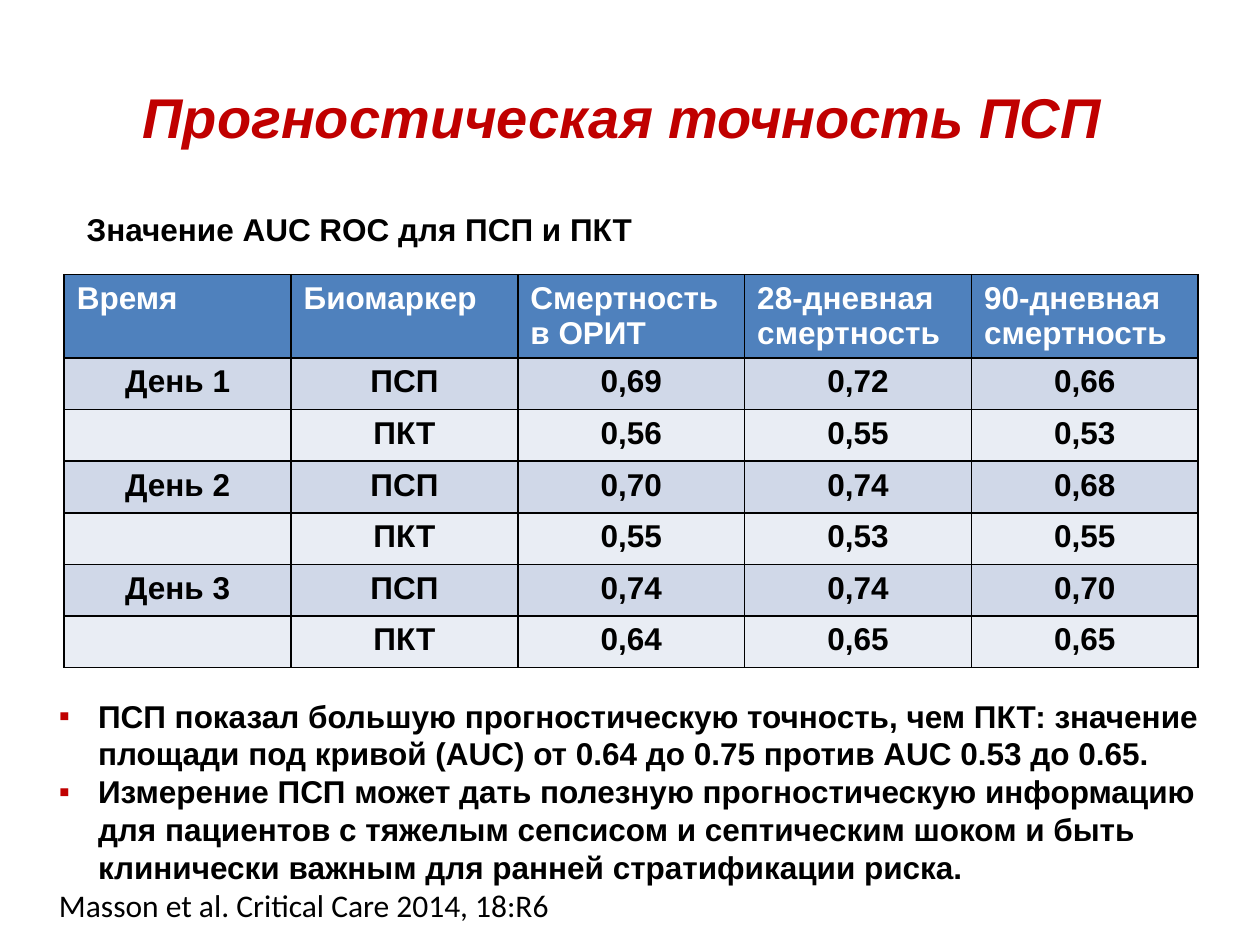
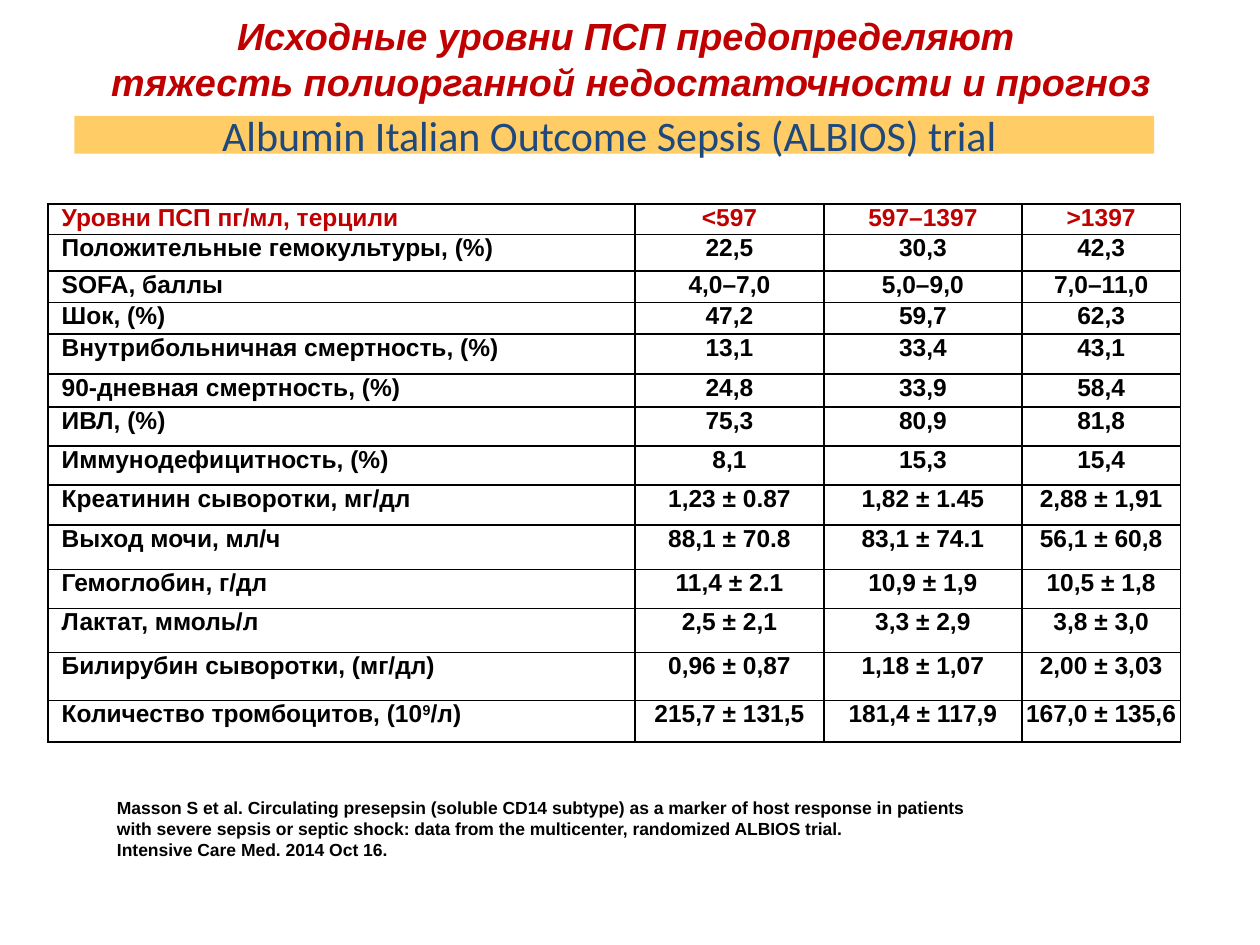
from dataclasses import dataclass

from lxml import etree
from pptx import Presentation
from pptx.dml.color import RGBColor
from pptx.enum.shapes import MSO_SHAPE
from pptx.enum.text import MSO_ANCHOR, MSO_AUTO_SIZE, PP_ALIGN
from pptx.oxml.ns import qn
from pptx.util import Inches, Pt

LEFT, MID = PP_ALIGN.LEFT, PP_ALIGN.CENTER
TOP, CENTER = MSO_ANCHOR.TOP, MSO_ANCHOR.MIDDLE
GROW, FIXED = MSO_AUTO_SIZE.SHAPE_TO_FIT_TEXT, MSO_AUTO_SIZE.NONE
RECT = MSO_SHAPE.RECTANGLE


@dataclass(frozen=True)
class Theme:
    red: str = "C00000"
    black: str = "000000"
    white: str = "FFFFFF"
    blue: str = "4F81BD"
    navy: str = "1F497D"
    gold: str = "FFCC66"
    bands: tuple = ("D0D8E8", "E9EDF4")
    sans: str = "Arial"
    plain: str = "Calibri"
    head: float = 32
    sub: float = 21.6
    band: float = 24
    body: float = 18
    data: float = 14
    note: float = 10


THEME = Theme()


def adorn(item, values):
    for key, value in values.items():
        setattr(item, key, value)


def style(size, color=THEME.black, **more):
    font = {"name": THEME.sans, "size": Pt(size), "bold": True, **more}
    return font, RGBColor.from_string(color)


def add_tag(parent, name, **values):
    return etree.SubElement(parent, qn(f"a:{name}"), values)


class Deck:
    def __init__(self, theme):
        self.theme = theme
        self.file = Presentation()
        adorn(self.file, {"slide_width": Inches(10), "slide_height": Inches(7.5)})

    def start(self):
        self.slide = self.file.slides.add_slide(self.file.slide_layouts[6])

    def add_line(self, para, text, look, align=LEFT):
        para.alignment = align
        font, color = look
        for spot, part in enumerate(text.split("^")):
            if part:
                run = para.add_run()
                run.text = part
                adorn(run.font, font)
                run.font.color.rgb = color
                if spot % 2:
                    run._r.get_or_add_rPr().set("baseline", "30000")

    def fill_text(self, frame, lines, look, align=LEFT, **values):
        adorn(frame, {"word_wrap": True, **values})
        for spot, line in enumerate(lines):
            para = frame.add_paragraph() if spot else frame.paragraphs[0]
            self.add_line(para, line, look, align)

    def text(self, place, lines, look, align=LEFT, **values):
        box = self.slide.shapes.add_textbox(*map(Inches, place))
        self.fill_text(box.text_frame, lines, look, align, **values)
        return box.text_frame

    def title(self, place, lines, size):
        look = style(size, self.theme.red, italic=True)
        self.text(place, lines, look, MID, vertical_anchor=CENTER, auto_size=FIXED)

    def band(self, place, line, look):
        bar = self.slide.shapes.add_shape(RECT, *map(Inches, place))
        bar.shadow.inherit = False
        bar.fill.solid()
        bar.fill.fore_color.rgb = RGBColor.from_string(self.theme.gold)
        bar.line.fill.background()
        self.fill_text(bar.text_frame, [line], look, MID, vertical_anchor=CENTER)

    def bullet(self, para):
        props = para._p.get_or_add_pPr()
        gap = Inches(0.31)
        props.set("marL", str(gap))
        props.set("indent", str(-gap))
        add_tag(add_tag(props, "buClr"), "srgbClr", val=self.theme.red)
        add_tag(props, "buFont", typeface=self.theme.sans)
        add_tag(props, "buChar", char="▪")

    def border(self, cell):
        props = cell._tc.get_or_add_tcPr()
        for spot, side in enumerate(("lnL", "lnR", "lnT", "lnB")):
            line = etree.Element(qn(f"a:{side}"), {"w": str(Pt(1))})
            add_tag(add_tag(line, "solidFill"), "srgbClr", val=self.theme.black)
            props.insert(spot, line)

    def table(self, place, cols, rows, data, paint):
        size = sum(cols), sum(rows)
        shape = self.slide.shapes.add_table(
            len(rows), len(cols), *map(Inches, (*place, *size)))
        grid = shape.table
        adorn(grid, {"first_row": False, "horz_banding": False})
        for col, width in zip(grid.columns, cols):
            col.width = Inches(width)
        for row, height in zip(grid.rows, rows):
            row.height = Inches(height)
        for down, line in enumerate(data):
            for across, text in enumerate(line):
                cell = grid.cell(down, across)
                fill, look, align, inset = paint(down, across)
                adorn(cell, inset)
                if fill:
                    cell.fill.solid()
                    cell.fill.fore_color.rgb = RGBColor.from_string(fill)
                else:
                    cell.fill.background()
                self.add_line(cell.text_frame.paragraphs[0], text, look, align)
                self.border(cell)


SCORES = [
    ("Время", "Биомаркер", "Смертность в ОРИТ", "28-дневная смертность",
     "90-дневная смертность"),
    ("День 1", "ПСП", "0,69", "0,72", "0,66"),
    ("", "ПКТ", "0,56", "0,55", "0,53"),
    ("День 2", "ПСП", "0,70", "0,74", "0,68"),
    ("", "ПКТ", "0,55", "0,53", "0,55"),
    ("День 3", "ПСП", "0,74", "0,74", "0,70"),
    ("", "ПКТ", "0,64", "0,65", "0,65"),
]
POINTS = [
    "ПСП показал большую прогностическую точность, чем ПКТ: значение площади "
    "под кривой (AUC) от 0.64 до 0.75 против AUC 0.53 до 0.65.",
    "Измерение ПСП может дать полезную прогностическую информацию для пациентов "
    "с тяжелым сепсисом и септическим шоком и быть клинически важным для ранней "
    "стратификации риска.",
]
LEVELS = [
    ("Уровни ПСП пг/мл, терцили", "<597", "597–1397", ">1397"),
    ("Положительные гемокультуры, (%)", "22,5", "30,3", "42,3"),
    ("SOFA, баллы", "4,0–7,0", "5,0–9,0", "7,0–11,0"),
    ("Шок, (%)", "47,2", "59,7", "62,3"),
    ("Внутрибольничная смертность, (%)", "13,1", "33,4", "43,1"),
    ("90-дневная смертность, (%)", "24,8", "33,9", "58,4"),
    ("ИВЛ, (%)", "75,3", "80,9", "81,8"),
    ("Иммунодефицитность, (%)", "8,1", "15,3", "15,4"),
    ("Креатинин сыворотки, мг/дл", "1,23 ± 0.87", "1,82 ± 1.45", "2,88 ± 1,91"),
    ("Выход мочи, мл/ч", "88,1 ± 70.8", "83,1 ± 74.1", "56,1 ± 60,8"),
    ("Гемоглобин, г/дл", "11,4 ± 2.1", "10,9 ± 1,9", "10,5 ± 1,8"),
    ("Лактат, ммоль/л", "2,5 ± 2,1", "3,3 ± 2,9", "3,8 ± 3,0"),
    ("Билирубин сыворотки, (мг/дл)", "0,96 ± 0,87", "1,18 ± 1,07", "2,00 ± 3,03"),
    ("Количество тромбоцитов, (10^9^/л)", "215,7 ± 131,5", "181,4 ± 117,9",
     "167,0 ± 135,6"),
]
HEIGHTS = [0.24, 0.29, 0.25, 0.25, 0.32, 0.26, 0.31, 0.31, 0.32, 0.35, 0.31,
           0.35, 0.38, 0.33]
SOURCE = [
    "Masson S et al. Circulating presepsin (soluble CD14 subtype) as a marker of "
    "host response in patients",
    "with severe sepsis or septic shock: data from the multicenter, randomized "
    "ALBIOS trial.",
    "Intensive Care Med. 2014 Oct 16.",
]


def paint_scores(down, across):
    if down == 0:
        return THEME.blue, style(THEME.body, THEME.white), LEFT, {}
    return THEME.bands[(down - 1) % 2], style(THEME.body), MID, {}


def paint_levels(down, across):
    sides = ("left", "right", "top", "bottom")
    inset = {f"margin_{side}": 0 for side in sides}
    if across == 0:
        inset["margin_left"] = Inches(0.11)
    color = THEME.black if down else THEME.red
    return None, style(THEME.data, color), MID if across else LEFT, inset


def show_scores(deck):
    deck.start()
    deck.title((0.5, 0.3, 9, 1.25), ["Прогностическая точность ПСП "], THEME.head)
    deck.table((0.51, 2.18), [1.8] * 5, [0.66] + [0.41] * 6, SCORES, paint_scores)
    deck.text((0.59, 1.62, 4.57, 0.4), ["Значение AUC ROC для ПСП и ПКТ"],
              style(THEME.body), word_wrap=False, auto_size=GROW)
    frame = deck.text((0.37, 5.48, 9.27, 1.92), POINTS, style(THEME.body),
                      vertical_anchor=TOP, auto_size=GROW)
    for para in frame.paragraphs:
        deck.bullet(para)
    deck.add_line(frame.add_paragraph(), "Masson et al. Critical Care 2014, 18:R6",
                  style(THEME.body, name=THEME.plain, bold=False))


def show_levels(deck):
    deck.start()
    deck.title((0.51, 0, 9, 0.93),
               ["Исходные уровни ПСП предопределяют ",
                "тяжесть полиорганной недостаточности и прогноз"], THEME.sub)
    deck.table((0.38, 1.62), [4.66, 1.5, 1.57, 1.26], HEIGHTS, LEVELS, paint_levels)
    deck.text((0.83, 6.27, 8.82, 0.61), SOURCE, style(THEME.note),
              vertical_anchor=CENTER, auto_size=GROW)
    deck.band((0.59, 0.92, 8.57, 0.3),
              "Albumin Italian Outcome Sepsis (ALBIOS) trial ",
              style(THEME.band, THEME.navy, name=THEME.plain, bold=False))


def main():
    deck = Deck(THEME)
    show_scores(deck)
    show_levels(deck)
    deck.file.save("out.pptx")


if __name__ == "__main__":
    main()
